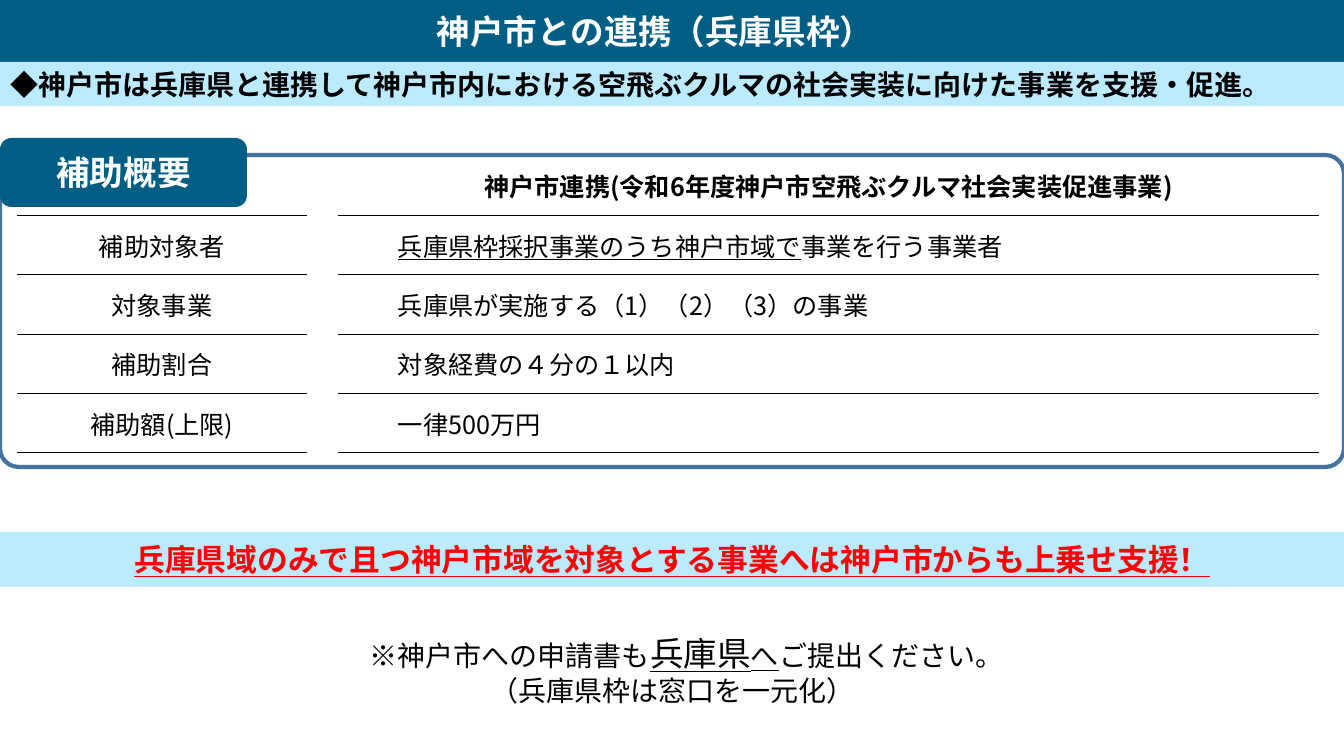
import pptx
import pptx.dml.color
import pptx.enum.shapes
import pptx.enum.text
import pptx.oxml
import pptx.oxml.ns
import pptx.util

SCALE = 914400 / 100.8  # EMU in one px
FONT = "Noto Sans CJK JP"
HUES = {"navy": "005D84", "sky": "BCEBFF", "edge": "43739E",
        "red": "FF0000", "black": "000000", "white": "FFFFFF"}
SHAPE = pptx.enum.shapes.MSO_SHAPE
ANCHOR = pptx.enum.text.MSO_ANCHOR
ALIGN = pptx.enum.text.PP_ALIGN
qn = pptx.oxml.ns.qn


def px(n):
    return pptx.util.Emu(round(n * SCALE))


def hue(name):
    return pptx.dml.color.RGBColor.from_string(HUES[name])


class Deck:
    def __init__(self, wide, high):
        self.prs = pptx.Presentation()
        self.prs.slide_width, self.prs.slide_height = px(wide), px(high)
        self.slide = self.prs.slides.add_slide(self.prs.slide_layouts[6])

    def words(self, para, runs, size, color="black", bold=False, under=None,
              align=ALIGN.CENTER):
        """Each run is a string or (string, size or None), underlined."""
        para.alignment = align
        font = para.font
        font.size, font.bold = pptx.util.Pt(size), bold
        font.underline = under
        font.color.rgb = hue(color)
        font.name = FONT
        face = para._p.pPr.find(qn("a:defRPr"))
        face.append(face.makeelement(qn("a:ea"), {"typeface": FONT}))
        for item in runs:
            run = para.add_run()
            if isinstance(item, str):
                run.text = item
            else:
                run.text, big = item
                run.font.underline = True
                if big:
                    run.font.size = pptx.util.Pt(big)

    def box(self, kind, at, fill, edge=None, bend=None):
        shape = self.slide.shapes.add_shape(kind, *map(px, at))
        shape.shadow.inherit = False
        shape.fill.solid()
        shape.fill.fore_color.rgb = hue(fill)
        if edge:
            shape.line.color.rgb = hue(edge)
            shape.line.width = pptx.util.Pt(3)
        else:
            shape.line.fill.background()
        if bend is not None:
            shape.adjustments[0] = bend
        return shape

    def label(self, shape, text, size, color, inset=(10, 5, 10, 5),
              anchor=ANCHOR.MIDDLE, **look):
        frame = shape.text_frame
        frame.word_wrap = True
        frame.vertical_anchor = anchor
        (frame.margin_left, frame.margin_top,
         frame.margin_right, frame.margin_bottom) = map(px, inset)
        self.words(frame.paragraphs[0], [text], size, color, True, **look)

    def note(self, at, lines, size):
        frame = self.slide.shapes.add_textbox(*map(px, at)).text_frame
        frame.word_wrap = True
        frame.auto_size = pptx.enum.text.MSO_AUTO_SIZE.SHAPE_TO_FIT_TEXT
        for i, runs in enumerate(lines):
            para = frame.add_paragraph() if i else frame.paragraphs[0]
            self.words(para, runs, size)

    def rule(self, cell, side, seen):
        props = cell._tc.get_or_add_tcPr()
        line = props.makeelement(qn("a:" + side), {"w": "12700"})
        if seen:
            fill = pptx.oxml.parse_xml(
                f'<a:solidFill {pptx.oxml.ns.nsdecls("a")}>'
                f'<a:srgbClr val="{HUES["black"]}"/></a:solidFill>')
        else:
            fill = props.makeelement(qn("a:noFill"), {})
        line.append(fill)
        props.append(line)

    def grid(self, at, cols, rows, size, indent):
        table = self.slide.shapes.add_table(
            len(rows), len(cols), *map(px, at)).table
        table.first_row = table.horz_banding = False
        for col, wide in zip(table.columns, cols):
            col.width = px(wide)
        for r, texts in enumerate(rows):
            table.rows[r].height = px(at[3] / len(rows))
            for c, runs in enumerate(texts):
                cell = table.cell(r, c)
                cell.vertical_anchor = ANCHOR.MIDDLE
                for side in ("lnL", "lnR", "lnT", "lnB"):
                    seen = c != 1 and (side == "lnB" or side == "lnT" and r > 0)
                    self.rule(cell, side, seen)
                cell.fill.background()
                body = r > 0 and c == 2
                if body:
                    cell.margin_left = px(indent)
                if runs:
                    self.words(cell.text_frame.paragraphs[0], runs, size,
                               bold=r == 0,
                               align=ALIGN.LEFT if body else ALIGN.CENTER)


def main():
    deck = Deck(1344, 756)

    # Title and closing bands
    title = deck.box(SHAPE.RECTANGLE, (0, 0, 1344, 62), "navy")
    deck.label(title, "神戸市との連携（兵庫県枠）", 24, "white", (0, 0, 34, 0))
    call = deck.box(SHAPE.RECTANGLE, (0, 532, 1344, 55), "sky")
    deck.label(call, "兵庫県域のみで且つ神戸市域を対象とする事業へは神戸市からも上乗せ支援！",
               22, "red", under=True)

    # Card with its tab
    deck.box(SHAPE.ROUNDED_RECTANGLE, (0, 155, 1344, 312), "white", "edge", 0.06)
    tab = deck.box(SHAPE.ROUNDED_RECTANGLE, (0, 138, 247, 69), "navy")
    deck.label(tab, "補助概要", 24, "white", (4, 5, 4, 5))

    # Lead sentence
    lead = deck.box(SHAPE.RECTANGLE, (0, 62, 1344, 44), "sky")
    deck.label(lead, "◆神戸市は兵庫県と連携して神戸市内における空飛ぶクルマの社会実装に向けた事業を支援・促進。",
               20, "black", anchor=ANCHOR.TOP, align=ALIGN.LEFT)

    # Subsidy table
    rows = [
        ([], [], ["神戸市連携(令和6年度神戸市空飛ぶクルマ社会実装促進事業)"]),
        (["補助対象者"], [], [("兵庫県枠採択事業のうち神戸市域で", None),
                         "事業を行う事業者"]),
        (["対象事業"], [], ["兵庫県が実施する（1）（2）（3）の事業"]),
        (["補助割合"], [], ["対象経費の４分の１以内"]),
        (["補助額(上限)"], [], ["一律500万円"]),
    ]
    deck.grid((17, 156, 1302, 297), (290, 31, 981), rows, 18, 60)

    # Where to apply
    deck.note((349, 628, 647, 85), [
        ["※神戸市への申請書も", ("兵庫県", 24), ("へ", None),
         "ご提出ください。"],
        ["（兵庫県枠は窓口を一元化）"],
    ], 20)

    deck.prs.save("out.pptx")


if __name__ == "__main__":
    main()
